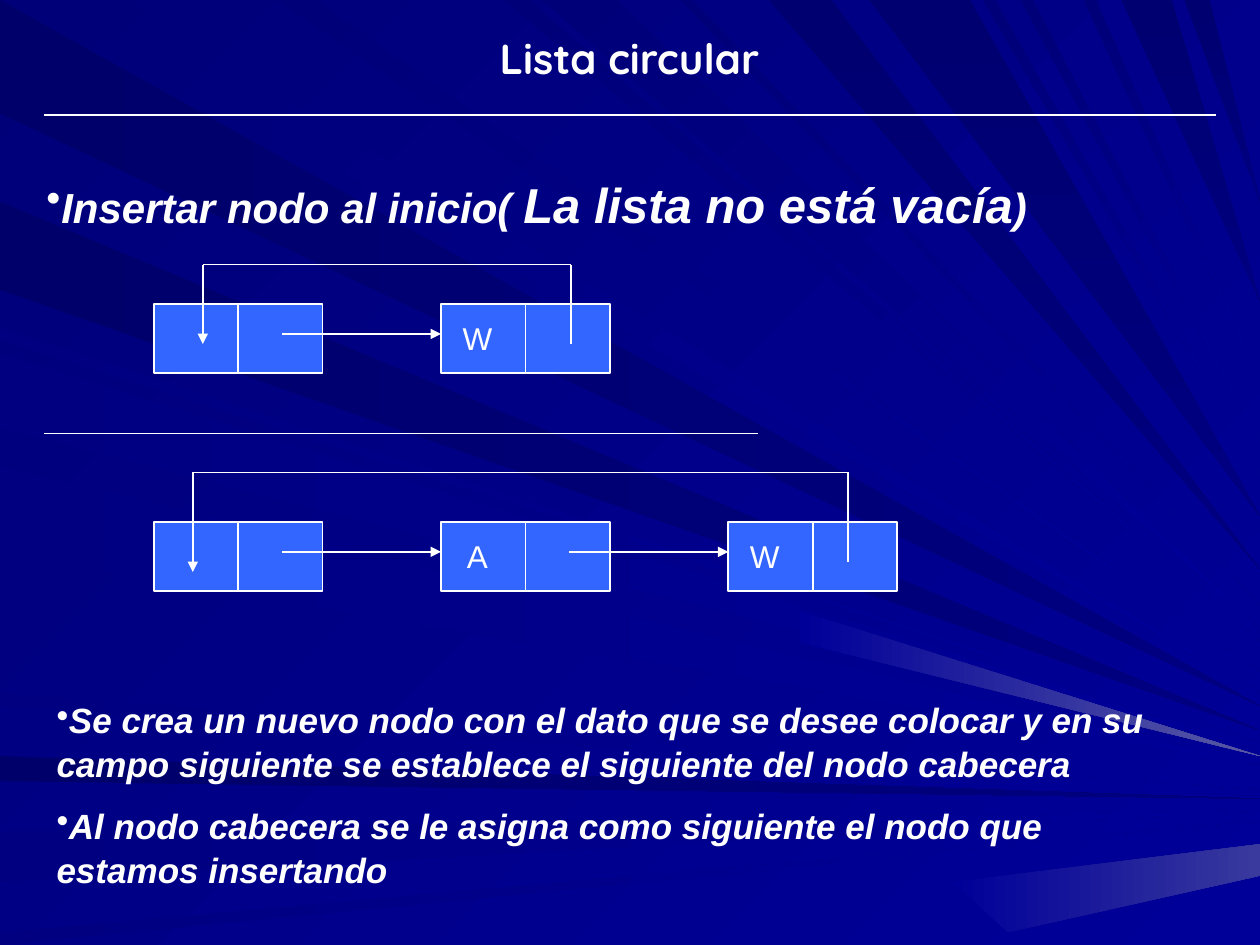
from dataclasses import dataclass

from lxml.etree import SubElement
from pptx import Presentation
from pptx.dml.color import RGBColor
from pptx.enum.shapes import MSO_CONNECTOR, MSO_SHAPE
from pptx.enum.text import MSO_ANCHOR, PP_ALIGN
from pptx.oxml.ns import qn
from pptx.util import Inches, Pt


@dataclass(frozen=True)
class Theme:
    ink: str = "FFFFFF"
    node: str = "3366FF"
    back: tuple = ("000078", "000099", 45)
    dark_left: tuple = ("00006B", "000080", 0)
    dark_top: tuple = ("000070", "000080", 90)
    light_left: tuple = ("000080", "000099", 0)
    light_top: tuple = ("000078", "000099", 45)
    glint: tuple = ("000099", "5A5AA6", 0)
    glow: tuple = ("000099", "39399E", 0)
    body_font: str = "Arial"
    title_font: str = "Quicksand"
    label: int = 18
    body: int = 20
    title: int = 24
    accent: int = 28
    rule: int = 1
    leading: float = 1.05


T = Theme()

LEFT_RAYS = (
    (T.dark_left, ((0, 0.9), (1.6, 2.3), (6, 6.2))),
    (T.light_left, ((2.6, 2.7), (2.8, 3.4), (3.7, 4.4), (5.5, 5.6), (6.6, 7), (7.4, 7.5))),
)
TOP_RAYS = (
    (T.dark_top, ((6.1, 6.6), (6.9, 7.7), (8.9, 9.3), (9.4, 9.6))),
    (T.light_top, ((0.3, 1), (2.2, 2.5), (4, 4.2), (4.3, 4.9), (5.4, 5.5),
                   (7.8, 7.9), (8.1, 8.2), (8.6, 8.7))),
)


def rgb(value):
    return RGBColor.from_string(value)


def paint(fill, start, end, angle):
    fill.gradient()
    fill.gradient_angle = (360 - angle) % 360
    for position, (stop, color) in enumerate(zip(fill.gradient_stops, (start, end))):
        stop.position = position
        stop.color.rgb = rgb(color)


def add_ray(s, shade, *points):
    corners = [(Inches(x), Inches(y)) for x, y in points]
    builder = s.shapes.build_freeform(*corners[0], scale=1.0)
    builder.add_line_segments(corners[1:], close=True)
    ray = builder.convert_to_shape()
    ray.shadow.inherit = False
    ray.line.fill.background()
    paint(ray.fill, *shade)


def add_rays(s, x, y, w, h):
    right = x + w
    focus_x, focus_y = right + 0.15 * w, y + 0.85 * h

    def right_edge(px, py):
        return right, py + (focus_y - py) * (right - px) / (focus_x - px)

    for shade, spans in LEFT_RAYS:
        for a, b in spans:
            add_ray(s, shade, (x, y + a), right_edge(x, y + (a + b) / 2), (x, y + b))
    for shade, spans in TOP_RAYS:
        for a, b in spans:
            add_ray(s, shade, (x + a, y), right_edge(x + (a + b) / 2, y), (x + b, y))
    add_ray(s, T.glint, (x + 6.35, y + 4.85), (right, y + 6), (x + 6.35, y + 5.1))
    add_ray(s, T.glow, (x + 7.56, y + 7), (right, y + 6.7), (right, y + 6.95), (x + 8, y + 7.4))


def add_line(shapes, x1, y1, x2, y2, arrow=False):
    line = shapes.add_connector(
        MSO_CONNECTOR.STRAIGHT, Inches(x1), Inches(y1), Inches(x2), Inches(y2))
    line.line.color.rgb = rgb(T.ink)
    line.line.width = Pt(T.rule)
    if arrow:
        SubElement(line.line._get_or_add_ln(), qn("a:tailEnd"), type="triangle")
    SubElement(line._element.spPr, qn("a:effectLst"))


def add_run(p, text, size, font=T.body_font, bold=True, italic=True):
    r = p.add_run()
    r.text = text
    r.font.size = Pt(size)
    r.font.name = font
    r.font.bold = bold
    r.font.italic = italic
    r.font.color.rgb = rgb(T.ink)


def add_text_frame(s, x, y, w, h):
    tf = s.shapes.add_textbox(Inches(x), Inches(y), Inches(w), Inches(h)).text_frame
    tf.word_wrap = True
    return tf


def add_title(s, x, y, w, h):
    p = add_text_frame(s, x, y, w, h).paragraphs[0]
    p.alignment = PP_ALIGN.CENTER
    add_run(p, "Lista circular", T.title, T.title_font, italic=False)


def add_bullets(s, x, y, w, h, items):
    tf = add_text_frame(s, x, y, w, h)
    for i, runs in enumerate(items):
        p = tf.add_paragraph() if i else tf.paragraphs[0]
        p.line_spacing = T.leading
        if i:
            p.space_before = Pt(T.body / 2)
        pPr = p._p.get_or_add_pPr()
        pPr.set("marL", "0")
        pPr.set("indent", "0")
        SubElement(pPr, qn("a:buChar"), char="•")
        for text, size in runs:
            add_run(p, text, size)


def add_node(s, x, y, w, h, label):
    shapes = s.shapes.add_group_shape().shapes
    sp = shapes.add_shape(MSO_SHAPE.RECTANGLE, Inches(x), Inches(y), Inches(w), Inches(h))
    sp.shadow.inherit = False
    sp.fill.solid()
    sp.fill.fore_color.rgb = rgb(T.node)
    sp.line.color.rgb = rgb(T.ink)
    sp.line.width = Pt(T.rule)
    if label:
        tf = sp.text_frame
        tf.word_wrap = False
        tf.vertical_anchor = MSO_ANCHOR.MIDDLE
        tf.margin_left = 0
        tf.margin_right = Inches(0.76)
        p = tf.paragraphs[0]
        p.alignment = PP_ALIGN.CENTER
        add_run(p, label, T.label, bold=False, italic=False)
    add_line(shapes, x + w / 2, y, x + w / 2, y + h)


def add_circular_list(s, x, y, labels, first, last, rise, end):
    w, h, step = 1.34, 0.55, 2.28
    for i, label in enumerate(labels):
        left = x + i * step
        add_node(s, left, y, w, h, label)
        if i:
            add_line(s.shapes, left - 1.26, y + 0.24, left, y + 0.24, arrow=True)
    top = y - rise
    add_line(s.shapes, x + last, y + 0.32, x + last, top)
    add_line(s.shapes, x + last, top, x + first, top)
    add_line(s.shapes, x + first, top, x + first, y + end, arrow=True)


def main():
    prs = Presentation()
    prs.slide_width, prs.slide_height = Inches(10), Inches(7.5)
    s = prs.slides.add_slide(prs.slide_layouts[6])
    paint(s.background.fill, *T.back)
    add_rays(s, 0, 0, 10, 7.5)
    add_line(s.shapes, 0.35, 0.91, 9.65, 0.91)
    add_bullets(s, 0.27, 1.31, 8.39, 0.57, [
        [("Insertar nodo al inicio( ", T.title), ("La lista no está vacía", T.accent),
         (")", T.title)]])
    add_line(s.shapes, 0.35, 3.44, 6.02, 3.44)
    add_circular_list(s, 1.22, 2.41, ("", "W"), 0.39, 3.31, 0.31, 0.32)
    add_circular_list(s, 1.22, 4.14, ("", "A", "W"), 0.31, 5.51, 0.39, 0.4)
    add_bullets(s, 0.35, 5.48, 8.98, 1.6, [
        [("Se crea un nuevo nodo con el dato que se desee colocar y en su campo "
          "siguiente se establece el siguiente del nodo cabecera", T.body)],
        [("Al nodo cabecera se le asigna como siguiente el nodo que estamos insertando",
          T.body)]])
    add_title(s, 0.27, 0.21, 9.45, 0.5)
    prs.save("out.pptx")


if __name__ == "__main__":
    main()
